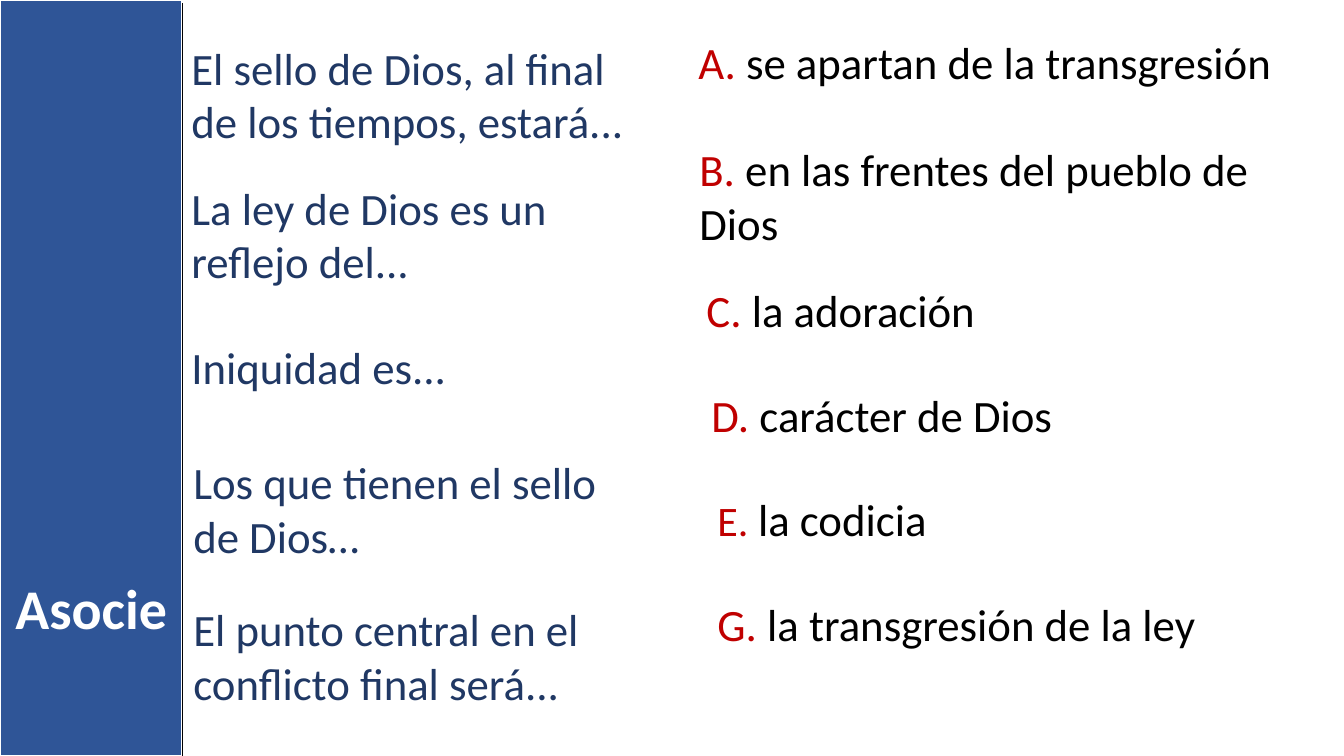
import pptx
import pptx.dml.color
import pptx.enum.shapes
import pptx.enum.text
import pptx.util
from lxml import etree

Pt = pptx.util.Pt


def rgb(value):
    return pptx.dml.color.RGBColor.from_string(value)


def add_text(left, top, width, height, size=32):
    box = slide.shapes.add_textbox(Pt(left), Pt(top), Pt(width), Pt(height))
    box.text_frame.word_wrap = True
    box.text_frame.auto_size = pptx.enum.text.MSO_AUTO_SIZE.SHAPE_TO_FIT_TEXT
    paragraph = box.text_frame.paragraphs[0]
    paragraph.font.name = "Calibri"
    paragraph.font.size = Pt(size)
    return paragraph


deck = pptx.Presentation()
deck.slide_width = Pt(960)
deck.slide_height = Pt(540)
slide = deck.slides.add_slide(deck.slide_layouts[6])

sidebar_width = 130.3
one_line, two_lines = 46, 85

sidebar = slide.shapes.add_shape(
    pptx.enum.shapes.MSO_SHAPE.RECTANGLE, 0, 0, Pt(sidebar_width), Pt(540))
sidebar.shadow.inherit = False
sidebar.fill.solid()
sidebar.fill.fore_color.rgb = rgb("2F5597")
sidebar.line.color.rgb = rgb("FFFFFF")
sidebar.line.width = Pt(1.5)

statements = [
    ("El sello de Dios, al final de los tiempos, estará...", 129.6, 25.2, 332.6, two_lines),
    ("La ley de Dios es un reflejo del...", 129.6, 125.3, 332.6, two_lines),
    ("Iniquidad es...", 129.6, 239, 319, one_line),
    ("Los que tienen el sello de Dios…", 131, 321.1, 331.2, two_lines),
    ("El punto central en el conflicto final será...", 131, 426.2, 317.5, two_lines),
]
for wording, left, top, width, height in statements:
    statement = add_text(left, top, width, height)
    statement.text = wording
    statement.font.color.rgb = rgb("203864")

answers = [
    ("A. ", "se apartan de la transgresión", 491.8, 20.9, 453.6, one_line, 32),
    ("B. ", "en las frentes del pueblo de Dios", 492.5, 97.9, 443.5, two_lines, 32),
    ("C. ", "la adoración", 497.5, 198.7, 430.6, one_line, 32),
    ("D. ", "carácter de Dios", 501.1, 273.6, 434.9, one_line, 32),
    ("E. ", "la codicia", 505.4, 347.8, 414, one_line, 30),
    ("G. ", "la transgresión de la ley", 505.4, 422.6, 419, one_line, 32),
]
for letter, wording, left, top, width, height, letter_size in answers:
    answer = add_text(left, top, width, height)
    for part, color, size in ((letter, "C00000", letter_size), (wording, "000000", 32)):
        run = answer.add_run()
        run.text = part
        run.font.size = Pt(size)
        run.font.color.rgb = rgb(color)

heading = add_text(0, 406.1, sidebar_width, 55.4, 40)
heading.text = "Asocie"
heading.alignment = pptx.enum.text.PP_ALIGN.CENTER
heading.font.bold = True
heading.font.color.rgb = rgb("FFFFFF")

divider = slide.shapes.add_connector(
    pptx.enum.shapes.MSO_CONNECTOR.STRAIGHT,
    Pt(sidebar_width), Pt(2.2), Pt(sidebar_width), Pt(540))
divider.line.color.rgb = rgb("000000")
divider.line.width = Pt(1)
etree.SubElement(divider.element.spPr, pptx.oxml.ns.qn("a:effectLst"))

deck.save("out.pptx")
